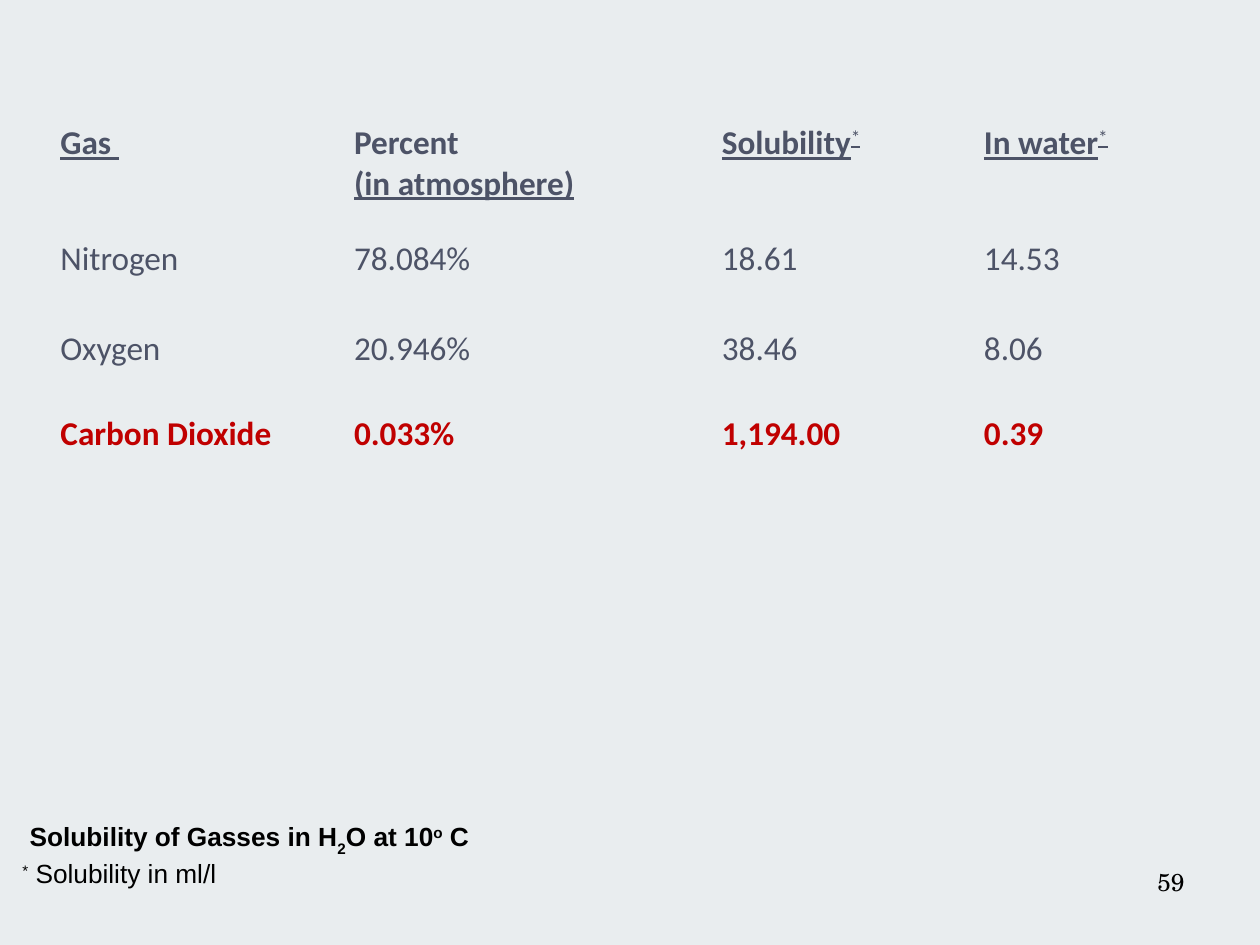
import pptx
import pptx.dml.color
import pptx.enum.text
import pptx.oxml.ns
import pptx.util

Inches = pptx.util.Inches
COLORS = {"background": "E9EDEF", "slate": "4D5367", "red": "C00000", "black": "000000"}


def add_span(para, text, *, font, size, color, bold=False, underline=False, baseline=0):
    """Append a formatted run; baseline is a percentage, negative for subscript."""
    span = para.add_run()
    span.text = text
    span.font.name = font
    span.font.size = pptx.util.Pt(size)
    span.font.bold = bold
    span.font.underline = underline
    span.font.color.rgb = pptx.dml.color.RGBColor.from_string(COLORS[color])
    if baseline:
        span.font._element.set("baseline", str(baseline * 1000))


deck = pptx.Presentation()
deck.slide_width, deck.slide_height = Inches(10), Inches(7.5)
page = deck.slides.add_slide(deck.slide_layouts[6])
page.background.fill.solid()
page.background.fill.fore_color.rgb = pptx.dml.color.RGBColor.from_string(COLORS["background"])

# Page number
number_box = page.shapes.add_textbox(Inches(7.17), Inches(6.83), Inches(2.33), Inches(0.52))
number_box.text_frame.word_wrap = True
number_para = number_box.text_frame.paragraphs[0]
number_para.alignment = pptx.enum.text.PP_ALIGN.RIGHT
add_span(number_para, "59", font="TeX Gyre Schola", size=14, color="black")

# Gas table: each cell is a list of lines, each line a list of (text, format)
underlined = {"underline": True}
star = ("*", {"underline": True, "bold": False, "baseline": 30})
header = [
    [[("Gas ", underlined)]],
    [[("Percent", {})], [("(in atmosphere)", underlined)]],
    [[("Solubility", underlined), star]],
    [[("In water", underlined), star]],
]
gases = [
    ["Nitrogen", "78.084%", "18.61", "14.53"],
    ["Oxygen", "20.946%", "38.46", "8.06"],
    ["Carbon Dioxide", "0.033%", "1,194.00", "0.39"],
]
rows = [header] + [[[[(value, {})]] for value in gas] for gas in gases]
row_formats = [
    {"color": "slate", "bold": True},
    {"color": "slate"},
    {"color": "slate"},
    {"color": "red", "bold": True},
]
column_widths = [2.33, 2.92, 2.08, 1.75]
row_heights = [0.92, 0.71, 0.68, 0.72]

table = page.shapes.add_table(
    len(rows), len(column_widths), Inches(0.42), Inches(0.92),
    Inches(sum(column_widths)), Inches(sum(row_heights)),
).table
table.first_row = table.horz_banding = False
style = table._tbl.tblPr.find(pptx.oxml.ns.qn("a:tableStyleId"))
style.text = "{2D5ABB26-0587-4C30-8999-92F81FD0307C}"  # no style, no grid
for column, width in zip(table.columns, column_widths):
    column.width = Inches(width)
for row, height in zip(table.rows, row_heights):
    row.height = Inches(height)

for row, contents, row_format in zip(table.rows, rows, row_formats):
    for cell, lines in zip(row.cells, contents):
        cell.fill.background()
        cell.margin_left = cell.margin_right = Inches(0.06)
        cell.margin_top = cell.margin_bottom = Inches(0.06)
        for index, line in enumerate(lines):
            frame = cell.text_frame
            para = frame.add_paragraph() if index else frame.paragraphs[0]
            for text, span_format in line:
                add_span(para, text, **{"font": "Calibri", "size": 19, **row_format, **span_format})

# Caption and footnote
caption_lines = [
    [
        (" ", {}),
        ("Solubility of Gasses in H", {"bold": True}),
        ("2", {"bold": True, "baseline": -30}),
        ("O at 10", {"bold": True}),
        ("o", {"bold": True, "baseline": 30}),
        (" C", {"bold": True}),
    ],
    [("*", {"baseline": 30}), (" Solubility in ml/l", {})],
]
caption_box = page.shapes.add_textbox(Inches(0.08), Inches(6.48), Inches(6.83), Inches(0.61))
caption = caption_box.text_frame
caption.word_wrap = True
caption.auto_size = pptx.enum.text.MSO_AUTO_SIZE.SHAPE_TO_FIT_TEXT
caption.vertical_anchor = pptx.enum.text.MSO_ANCHOR.MIDDLE
for index, line in enumerate(caption_lines):
    para = caption.add_paragraph() if index else caption.paragraphs[0]
    for text, span_format in line:
        add_span(para, text, font="Arial", size=15, color="black", **span_format)

deck.save("out.pptx")
